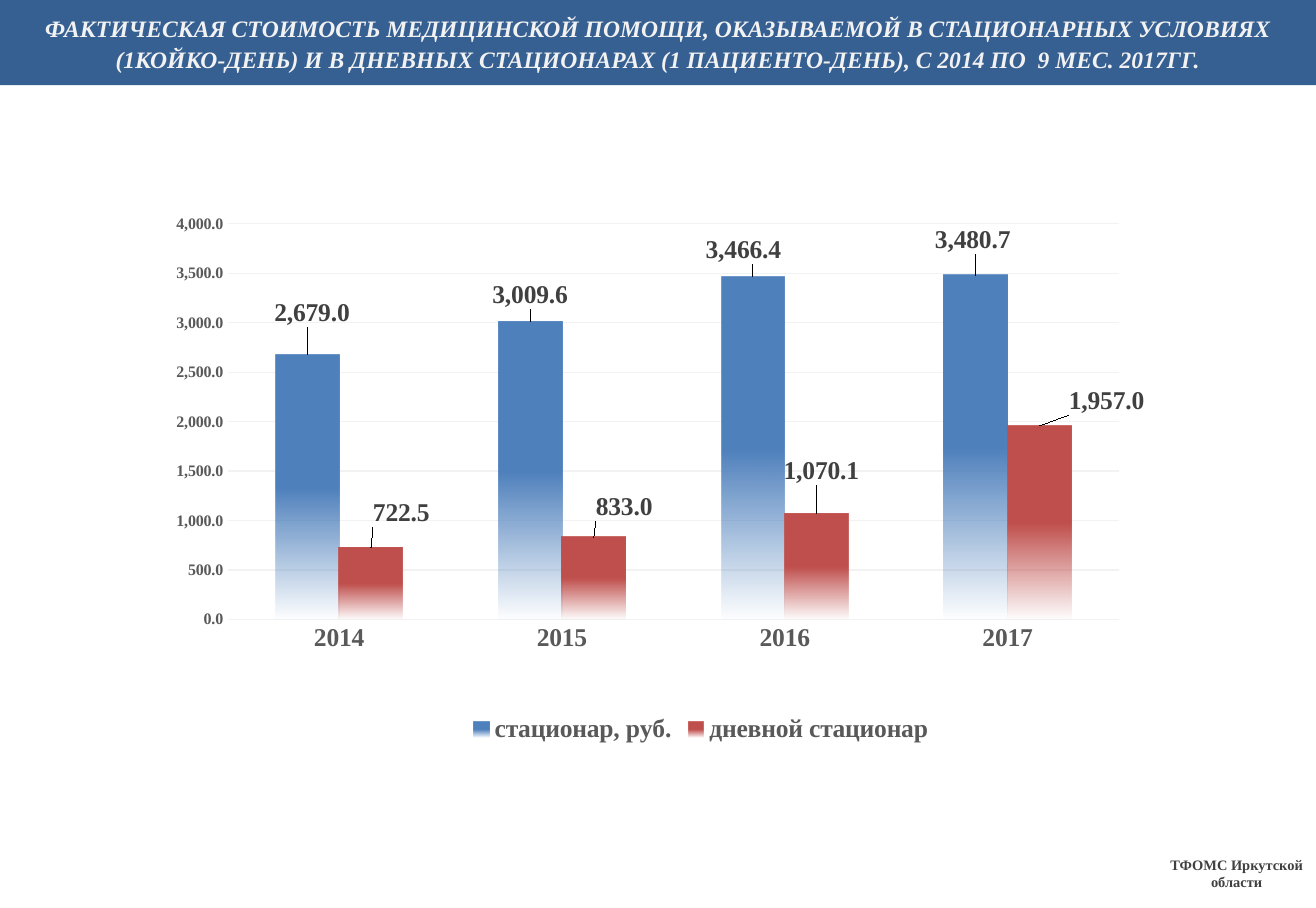
from lxml import etree
from pptx import Presentation
from pptx.chart.data import CategoryChartData
from pptx.dml.color import RGBColor
from pptx.enum import chart as ch, shapes, text
from pptx.oxml import ns
from pptx.util import Pt

NAVY = RGBColor(0x37, 0x60, 0x92)
PALE = RGBColor(0xF2, 0xF2, 0xF2)
BLUE = RGBColor(0x4F, 0x81, 0xBD)
RED = RGBColor(0xC0, 0x50, 0x4D)
DARK = RGBColor(0x40, 0x40, 0x40)
GREY = RGBColor(0x59, 0x59, 0x59)
CHART_W, CHART_H = 620, 373


def style(font, size, color, italic=False):
    font.name, font.size = "Times New Roman", Pt(size)
    font.bold, font.italic = True, italic
    font.color.rgb = color


def add_layout(before, **values):
    """Insert a manual chart layout right after the given element."""
    layout = etree.Element(ns.qn("c:layout"))
    manual = etree.SubElement(layout, ns.qn("c:manualLayout"))
    for tag, val in values.items():
        etree.SubElement(manual, ns.qn("c:" + tag)).set("val", str(val))
    before.addnext(layout)


prs = Presentation()
prs.slide_width, prs.slide_height = Pt(822.24), Pt(567.36)
s = prs.slides.add_slide(prs.slide_layouts[6])

# Footer
sp = s.shapes.add_textbox(Pt(722.9), Pt(531.4), Pt(99.4), Pt(28.8))
tf = sp.text_frame
tf.word_wrap = True
p = tf.paragraphs[0]
p.text, p.alignment = "ТФОМС Иркутской области", text.PP_ALIGN.CENTER
style(p.runs[0].font, 9, DARK)

# Title band
sp = s.shapes.add_shape(shapes.MSO_SHAPE.RECTANGLE, 0, 0, prs.slide_width, Pt(53.3))
sp.shadow.inherit = False
sp.fill.solid()
sp.fill.fore_color.rgb = NAVY
sp.line.fill.background()
tf = sp.text_frame
tf.word_wrap, tf.vertical_anchor = True, text.MSO_ANCHOR.MIDDLE
p = tf.paragraphs[0]
p.text = ("ФАКТИЧЕСКАЯ СТОИМОСТЬ МЕДИЦИНСКОЙ ПОМОЩИ, ОКАЗЫВАЕМОЙ В СТАЦИОНАРНЫХ УСЛОВИЯХ "
          "(1КОЙКО-ДЕНЬ) И В ДНЕВНЫХ СТАЦИОНАРАХ (1 ПАЦИЕНТО-ДЕНЬ), С 2014 ПО  9 МЕС. 2017ГГ.")
p.alignment, p.line_spacing = text.PP_ALIGN.CENTER, 1.07
style(p.runs[0].font, 14.7, PALE, italic=True)

# Chart: name, colour, values, label shifts in points
SERIES = [
    ("стационар, руб.", BLUE, (2679, 3009.6, 3466.4, 3480.7),
     [(3, -14), (0, -5), (-6, -5), (-2, -10)]),
    ("дневной стационар", RED, (722.5, 833, 1070.1, 1957),
     [(19, -10), (19, -7), (3, -15), (42, -4)]),
]
data = CategoryChartData(number_format="#,##0.0")
data.categories = ["2014", "2015", "2016", "2017"]
for name, _, values, _ in SERIES:
    data.add_series(name, values)
chart = s.shapes.add_chart(ch.XL_CHART_TYPE.COLUMN_CLUSTERED, Pt(110.2), Pt(95.8),
                           Pt(CHART_W), Pt(CHART_H), data).chart
chart.has_title = False
style(chart.font, 16, GREY)
plot = chart.plots[0]
plot.gap_width, plot.overlap, plot.vary_by_categories = 150, 0, False
for old in chart._chartSpace.xpath("c:chart/c:plotArea/c:layout"):
    old.getparent().remove(old)
plot_area = chart._chartSpace.xpath("c:chart/c:plotArea")[0]
add_layout(plot_area[0], layoutTarget="inner", xMode="edge", yMode="edge",
           x=0.05, y=0.118, w=0.9, h=0.663)
plot_area.insert(0, plot_area[1])

# Axes
for axis, size in ((chart.category_axis, 16), (chart.value_axis, 10)):
    axis.major_tick_mark = axis.minor_tick_mark = ch.XL_TICK_MARK.NONE
    axis.format.line.fill.background()
    style(axis.tick_labels.font, size, GREY)
axis = chart.value_axis
axis.minimum_scale, axis.maximum_scale, axis.major_unit = 0, 4000, 500
axis.tick_labels.number_format = "#,##0.0"
axis.tick_labels.number_format_is_linked = False
axis.major_gridlines.format.line.color.rgb = PALE
axis.major_gridlines.format.line.width = Pt(0.75)

# Fading columns and shifted labels
for series, (_, color, _, shifts) in zip(plot.series, SERIES):
    fill = series.format.fill
    fill.gradient()
    fill.gradient_angle = 270
    for stop, position in zip(fill.gradient_stops, (0.5, 1)):
        stop.color.rgb, stop.position = color, position
    clear = series._element.xpath("c:spPr//a:srgbClr")[-1]
    etree.SubElement(clear, ns.qn("a:alpha")).set("val", "0")
    labels = series.data_labels
    labels.show_value = True
    labels.number_format, labels.number_format_is_linked = "#,##0.0", False
    labels.position = ch.XL_LABEL_POSITION.OUTSIDE_END
    style(labels.font, 16, DARK)
    for i, (dx, dy) in enumerate(shifts):
        label = series.points[i].data_label
        label.position = ch.XL_LABEL_POSITION.OUTSIDE_END
        style(label.font, 16, DARK)
        idx = series._element.xpath(f"c:dLbls/c:dLbl/c:idx[@val='{i}']")[0]
        add_layout(idx, x=round(dx / CHART_W, 4), y=round(dy / CHART_H, 4))

# Legend
chart.has_legend = True
legend = chart.legend
legend.position = ch.XL_LEGEND_POSITION.BOTTOM
legend.include_in_layout = False
style(legend.font, 16, GREY)
for old in legend._element.xpath("c:layout"):
    legend._element.remove(old)
add_layout(legend._element.xpath("c:legendPos")[0], xMode="edge", yMode="edge", x=0.29, y=0.94)

prs.save("out.pptx")
